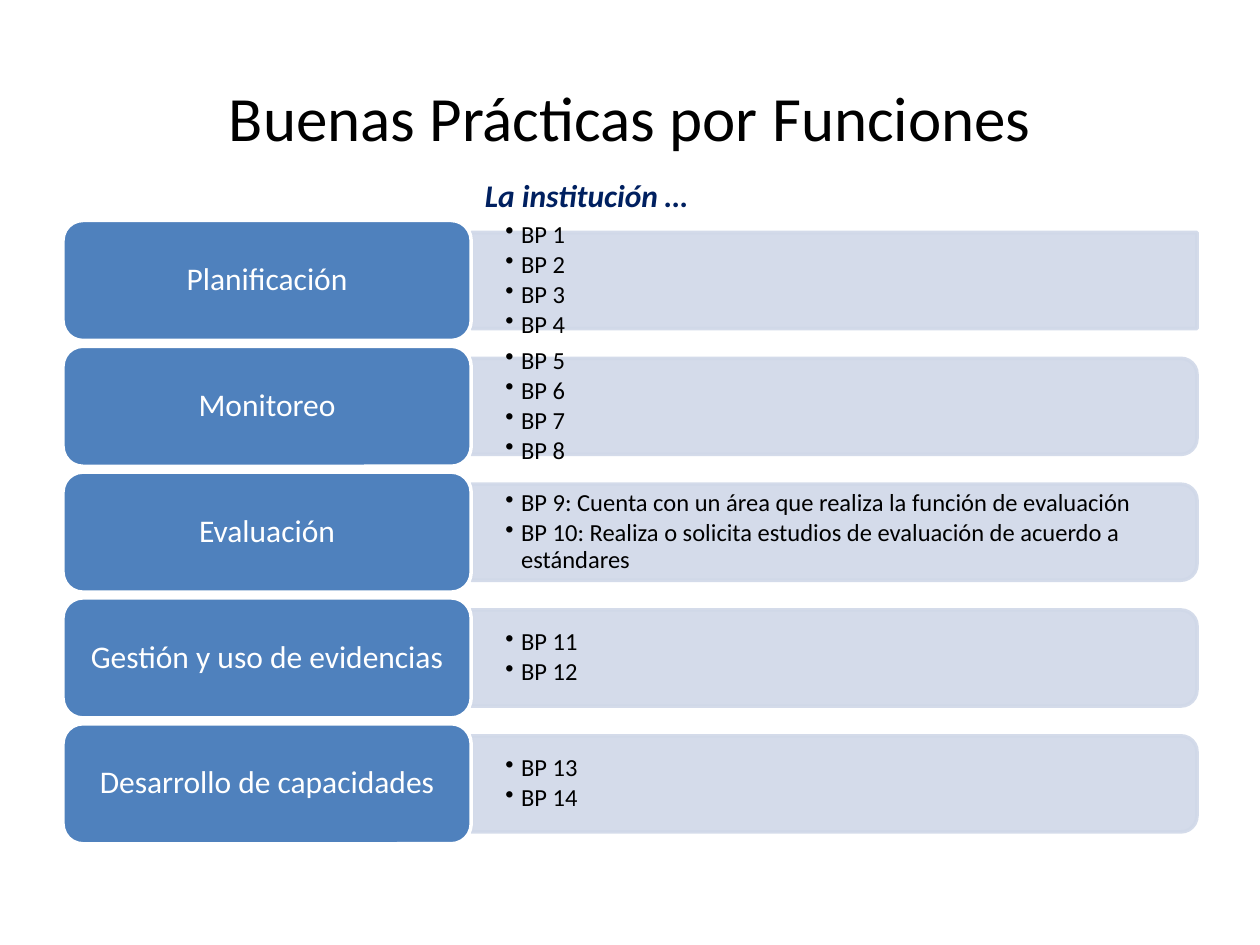
"""Build the slide of good practices grouped by institutional function."""
import pptx
import pptx.dml.color
import pptx.enum.shapes
import pptx.enum.text
import pptx.oxml.ns
import pptx.util
from lxml import etree

Pt = pptx.util.Pt
SHAPES = pptx.enum.shapes.MSO_SHAPE
ALIGN = pptx.enum.text.PP_ALIGN
ANCHOR = pptx.enum.text.MSO_ANCHOR
COLORS = {"black": "000000", "white": "FFFFFF", "navy": "002060", "label": "4F81BD", "panel": "D0D8E8"}
FUNCTIONS = [
    ("Planificación", ["BP 1", "BP 2", "BP 3", "BP 4"]),
    ("Monitoreo", ["BP 5", "BP 6", "BP 7", "BP 8"]),
    ("Evaluación", [
        "BP 9: Cuenta con un área que realiza la función de evaluación",
        "BP 10: Realiza o solicita estudios de evaluación de acuerdo a estándares",
    ]),
    ("Gestión y uso de evidencias", ["BP 11", "BP 12"]),
    ("Desarrollo de capacidades", ["BP 13", "BP 14"]),
]
LEFT, TOP, PITCH = 36, 126, 71.9
LABEL_WIDTH, LABEL_HEIGHT = 233.3, 68.6
PANEL_WIDTH, PANEL_HEIGHT = 414.7, 54.9
PANEL_LEFT = LEFT + LABEL_WIDTH


def write(shape, lines, size, color, align, anchor, inset_x, inset_y):
    frame = shape.text_frame
    frame.word_wrap = True
    frame.vertical_anchor = anchor
    frame.margin_left = frame.margin_right = Pt(inset_x)
    frame.margin_top = frame.margin_bottom = Pt(inset_y)
    frame.text = "\n".join(lines)
    for paragraph in frame.paragraphs:
        paragraph.alignment = align
        font = paragraph.runs[0].font
        font.name = "Calibri"
        font.size = Pt(size)
        font.color.rgb = pptx.dml.color.RGBColor.from_string(COLORS[color])
    return frame.paragraphs


def add_box(kind, left, top, width, height, fill, line):
    shape = slide.shapes.add_shape(kind, Pt(left), Pt(top), Pt(width), Pt(height))
    shape.shadow.inherit = False
    shape.fill.solid()
    shape.fill.fore_color.rgb = pptx.dml.color.RGBColor.from_string(COLORS[fill])
    shape.line.color.rgb = pptx.dml.color.RGBColor.from_string(COLORS[line])
    shape.line.width = Pt(2)
    return shape


presentation = pptx.Presentation()
presentation.slide_width = Pt(720)
presentation.slide_height = Pt(540)
slide = presentation.slides.add_slide(presentation.slide_layouts[6])

title = slide.shapes.add_textbox(Pt(36), Pt(21.6), Pt(648), Pt(90))
write(title, ["Buenas Prácticas por Funciones"], 36, "black", ALIGN.CENTER, ANCHOR.MIDDLE, 7.2, 3.6)

for index, (function, practices) in enumerate(FUNCTIONS):
    top = TOP + index * PITCH
    middle = top + LABEL_HEIGHT / 2

    panel = add_box(
        SHAPES.ROUND_2_SAME_RECTANGLE if index else SHAPES.RECTANGLE,
        PANEL_LEFT + (PANEL_WIDTH - PANEL_HEIGHT) / 2, middle - PANEL_WIDTH / 2,
        PANEL_HEIGHT, PANEL_WIDTH, "panel", "panel",
    )
    panel.rotation = 90
    for color in panel.element.spPr.iter(pptx.oxml.ns.qn("a:srgbClr")):
        etree.SubElement(color, pptx.oxml.ns.qn("a:alpha"), val="90000")

    text_width, text_height = (412, 49.5) if index else (PANEL_WIDTH, PANEL_HEIGHT)
    practice_list = slide.shapes.add_textbox(
        Pt(PANEL_LEFT), Pt(middle - text_height / 2), Pt(text_width), Pt(text_height)
    )
    for paragraph in write(practice_list, practices, 14, "black", ALIGN.LEFT, ANCHOR.MIDDLE, 19.5, 9.75):
        paragraph.line_spacing = 0.9
        paragraph.space_after = Pt(2)
        properties = paragraph._p.get_or_add_pPr()
        properties.set("marL", str(Pt(9)))
        properties.set("indent", str(-Pt(9)))
        etree.SubElement(properties, pptx.oxml.ns.qn("a:buChar"), char="•")

    label = add_box(SHAPES.ROUNDED_RECTANGLE, LEFT, top, LABEL_WIDTH, LABEL_HEIGHT, "label", "white")
    for paragraph in write(label, [function], 18, "white", ALIGN.CENTER, ANCHOR.MIDDLE, 5.4, 2.7):
        paragraph.line_spacing = 0.9

subtitle = slide.shapes.add_textbox(Pt(270), Pt(97.2), Pt(282), Pt(29))
for paragraph in write(subtitle, ["La institución …"], 18, "navy", ALIGN.LEFT, ANCHOR.TOP, 7.2, 3.6):
    paragraph.runs[0].font.bold = True
    paragraph.runs[0].font.italic = True

presentation.save("out.pptx")
